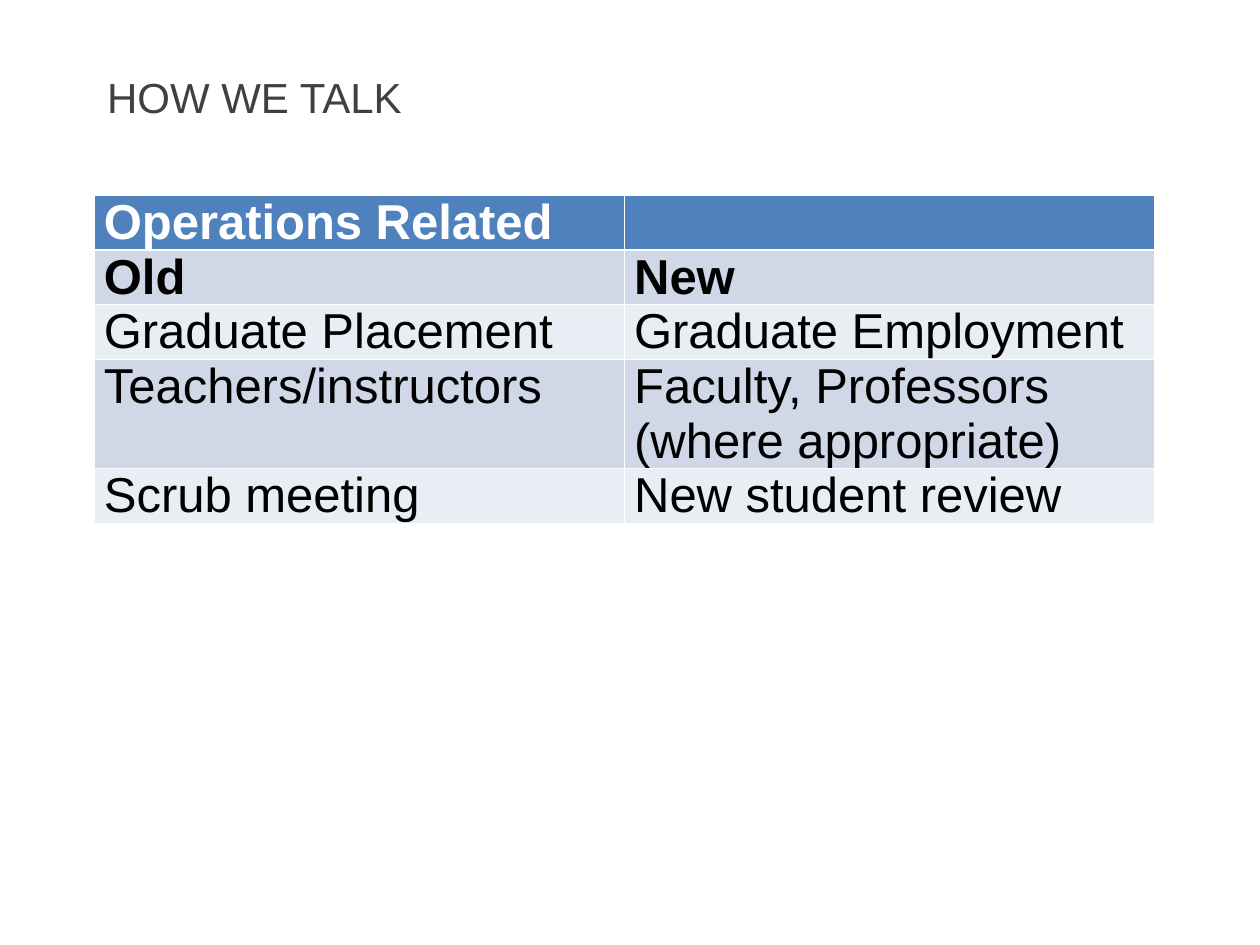
from pptx import Presentation
from pptx.dml.color import RGBColor
from pptx.enum.text import MSO_ANCHOR, PP_ALIGN
from pptx.util import Pt

LEFT = PP_ALIGN.LEFT
MIDDLE = MSO_ANCHOR.MIDDLE
TITLE_ONLY = 5
FONT = "Arial"
COLORS = {
    "title": "404040",
    "header": "4F81BD",
    "header_text": "FFFFFF",
    "text": "000000",
    "band_dark": "D0D8E8",
    "band_light": "E9EDF4",
}
ROWS = [
    ("Operations Related", ""),
    ("Old", "New"),
    ("Graduate Placement", "Graduate Employment"),
    ("Teachers/instructors", "Faculty, Professors (where appropriate)"),
    ("Scrub meeting", "New student review"),
]
ROW_HEIGHT = 29.5
COLUMN_WIDTH = 303


def style_font(font, size, color, bold=False):
    font.name = FONT
    font.size = Pt(size)
    font.bold = bold
    font.color.rgb = RGBColor.from_string(COLORS[color])


deck = Presentation()
deck.slide_width, deck.slide_height = Pt(720), Pt(540)
page = deck.slides.add_slide(deck.slide_layouts[TITLE_ONLY])

# Title
title = page.shapes.title
title.left, title.top, title.width, title.height = Pt(54), Pt(24), Pt(516), Pt(62.5)
title.text_frame.text = "HOW WE TALK"
title.text_frame.vertical_anchor = MIDDLE
heading = title.text_frame.paragraphs[0]
heading.alignment = LEFT
style_font(heading.runs[0].font, 24, "title")

# Table: the default style supplies the white borders
table = page.shapes.add_table(
    len(ROWS), 2, Pt(54), Pt(111.6), Pt(2 * COLUMN_WIDTH), Pt(len(ROWS) * ROW_HEIGHT)
).table
for column in table.columns:
    column.width = Pt(COLUMN_WIDTH)

for row_index, texts in enumerate(ROWS):
    table.rows[row_index].height = Pt(ROW_HEIGHT)
    if row_index == 0:
        fill = "header"
    else:
        fill = "band_dark" if row_index % 2 else "band_light"
    text_color = "header_text" if row_index == 0 else "text"
    for column_index, text in enumerate(texts):
        cell = table.cell(row_index, column_index)
        cell.margin_left = cell.margin_right = Pt(5.4)
        cell.margin_top = cell.margin_bottom = Pt(0)
        cell.fill.solid()
        cell.fill.fore_color.rgb = RGBColor.from_string(COLORS[fill])
        cell.text_frame.text = text
        for span in cell.text_frame.paragraphs[0].runs:
            style_font(span.font, 28, text_color, bold=row_index < 2)

deck.save("out.pptx")
